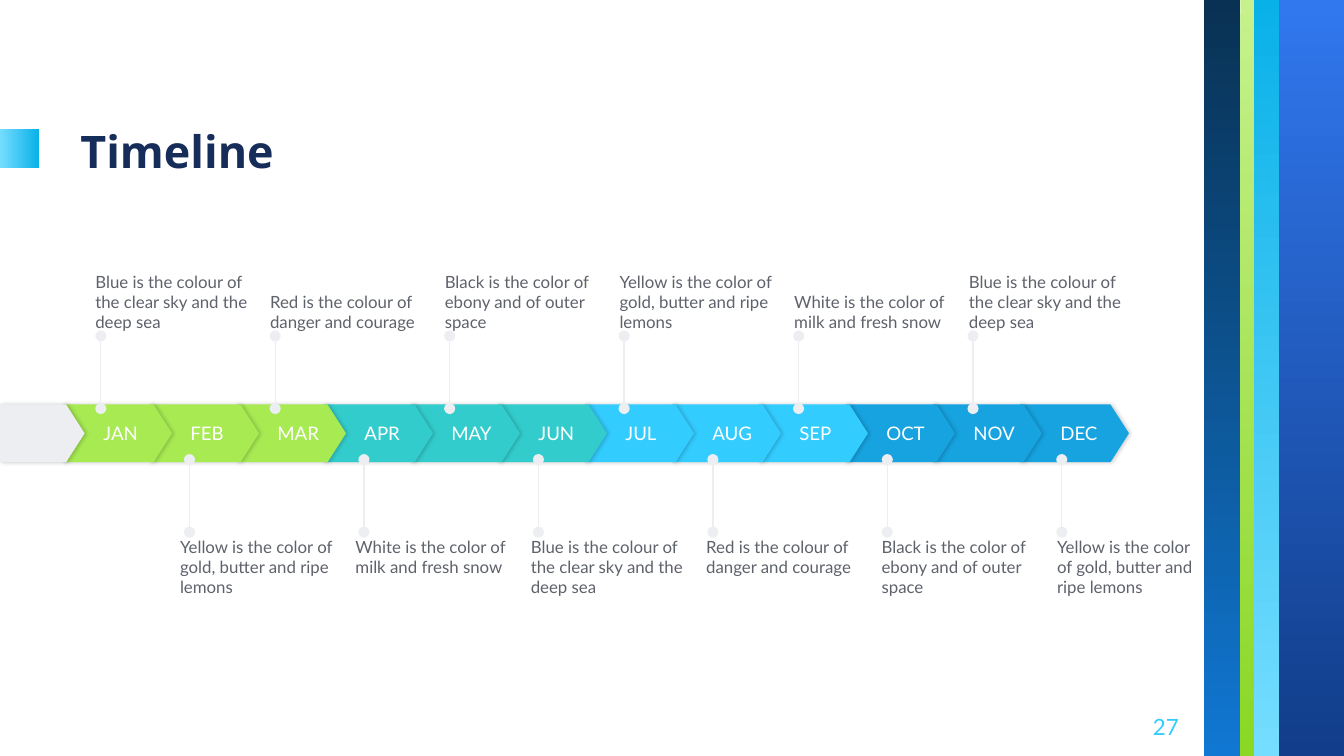
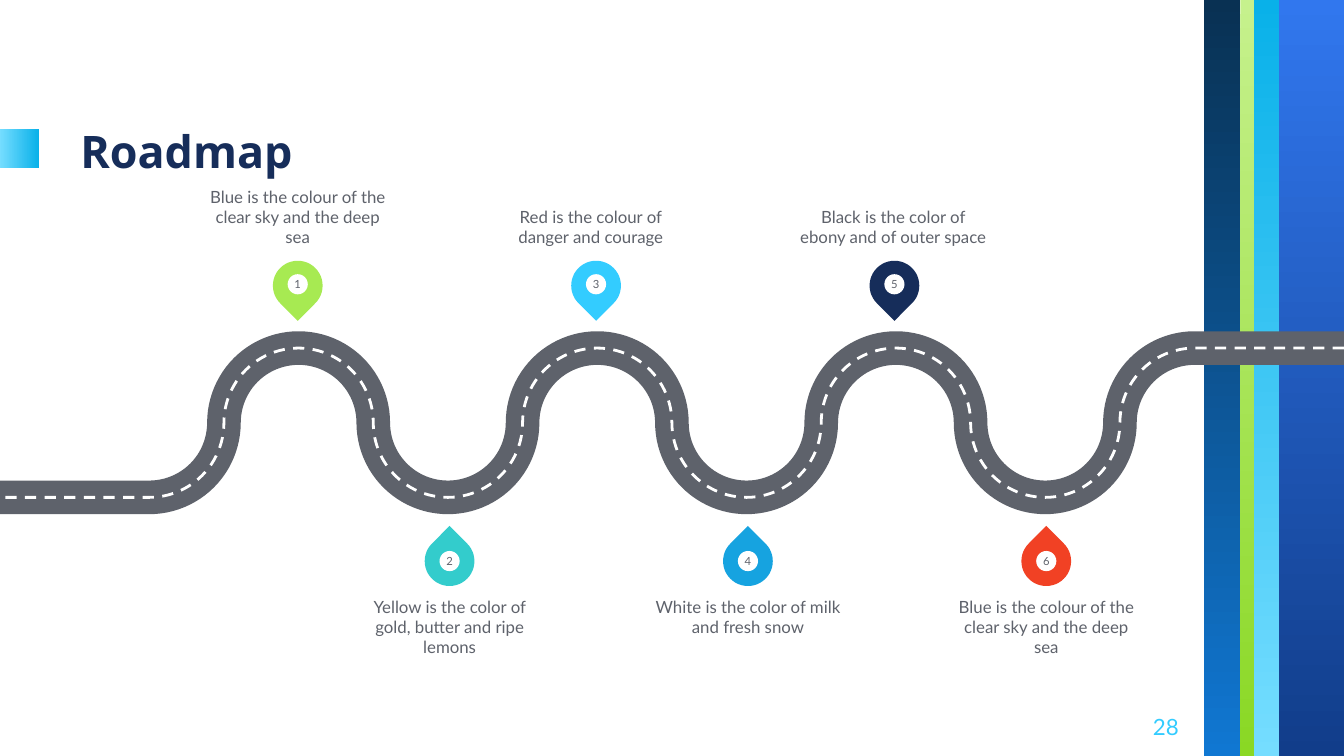
import lxml.etree
import pptx
import pptx.dml.color
import pptx.enum.dml
import pptx.enum.shapes
import pptx.enum.text
import pptx.oxml.ns
import pptx.util

Inches = pptx.util.Inches
Pt = pptx.util.Pt
RGB = pptx.dml.color.RGBColor.from_string
SHAPE = pptx.enum.shapes.MSO_SHAPE
ANCHOR = pptx.enum.text.MSO_ANCHOR
ALIGN = pptx.enum.text.PP_ALIGN
qn = pptx.oxml.ns.qn

PAGE_WIDTH = 10
PAGE_HEIGHT = PAGE_WIDTH * 9 / 16
COLORS = {
    "navy": "162D5A", "gray": "5E626B", "pale": "EDEEF1", "white": "FFFFFF",
    "lime": "A7EA52", "teal": "33CCCC", "sky": "33CCFF", "blue": "16A3E0", "red": "F14124",
    "royal": "3177EE", "royal_dark": "113D8A", "cyan": "09B1E9", "cyan_light": "75DDFF",
    "green_light": "C6F18D", "green": "8AD824", "deep": "093153", "azure": "1077D2",
}
BANDS = [
    (9.51, 0, 0.49, PAGE_HEIGHT, "royal", "royal_dark", 270),
    (9.32, 0, 0.2, PAGE_HEIGHT, "cyan", "cyan_light", 270),
    (9.23, 0, 0.1, PAGE_HEIGHT, "green_light", "green", 270),
    (8.96, 0, 0.27, PAGE_HEIGHT, "deep", "azure", 270),
    (0, 0.96, 0.29, 0.29, "cyan_light", "cyan", 0),
]
BLUE = "Blue is the colour of the clear sky and the deep sea"
YELLOW = "Yellow is the color of gold, butter and ripe lemons"
RED = "Red is the colour of danger and courage"
WHITE = "White is the color of milk and fresh snow"
BLACK = "Black is the color of ebony and of outer space"


def add_plain(shapes, kind, box, color):
    shape = shapes.add_shape(kind, *map(Inches, box))
    shape.shadow.inherit = False
    shape.line.fill.background()
    shape.fill.solid()
    shape.fill.fore_color.rgb = RGB(COLORS[color])
    return shape


def write(shape, text, size, color="gray", anchor=ANCHOR.TOP, align=ALIGN.LEFT,
          inset=(0, 0, 0, 0), font="Lato", bold=False):
    frame = shape.text_frame
    frame.word_wrap = True
    frame.vertical_anchor = anchor
    frame.margin_left, frame.margin_top, frame.margin_right, frame.margin_bottom = map(Inches, inset)
    para = frame.paragraphs[0]
    para.text = text
    para.alignment = align
    para.font.size = Pt(size)
    para.font.name = font
    para.font.bold = bold
    para.font.color.rgb = RGB(COLORS[color])


deck = pptx.Presentation()
deck.slide_width = Inches(PAGE_WIDTH)
deck.slide_height = Inches(PAGE_HEIGHT)

pages = []
for number, title in [(27, "Timeline"), (28, "Roadmap")]:
    page = deck.slides.add_slide(deck.slide_layouts[6])
    pages.append(page)
    for left, top, width, height, first, last, angle in BANDS:
        band = add_plain(page.shapes, SHAPE.RECTANGLE, (left, top, width, height), first)
        band.fill.gradient()
        band.fill.gradient_angle = angle
        for stop, position, color in zip(band.fill.gradient_stops, (0, 1), (first, last)):
            stop.position = position
            stop.color.rgb = RGB(COLORS[color])
    box = page.shapes.add_textbox(Inches(0.5), Inches(0.62), Inches(5.8), Inches(0.8))
    write(box, title, 24, "navy", ANCHOR.BOTTOM, inset=[0.1] * 4, font="Noto Sans", bold=True)
    box = page.shapes.add_textbox(Inches(8.27), Inches(5.19), Inches(0.6), Inches(0.43))
    write(box, str(number), 12, "sky", ANCHOR.MIDDLE, ALIGN.RIGHT, [0.1] * 4)

timeline, roadmap = pages

months = ["JAN", "FEB", "MAR", "APR", "MAY", "JUN", "JUL", "AUG", "SEP", "OCT", "NOV", "DEC"]
quarters = ["lime", "teal", "sky", "blue"]
plates = [(0.47 + 7.12 / 11 * i, 0.81, quarters[i // 3], month) for i, month in enumerate(months)]
for left, width, color, month in plates[::-1] + [(0, 0.63, "pale", "")]:
    plate = add_plain(timeline.shapes, SHAPE.PENTAGON, (left, 3.01, width, 0.43), color)
    plate.adjustments[0] = 0.32
    effects = plate._element.spPr.find(qn("a:effectLst"))
    shadow = lxml.etree.SubElement(effects, qn("a:outerShdw"), blurRad=str(Pt(2.2)),
                                   dist=str(Pt(0.8)), dir="0", algn="bl", rotWithShape="0")
    tint = lxml.etree.SubElement(shadow, qn("a:srgbClr"), val="000000")
    lxml.etree.SubElement(tint, qn("a:alpha"), val="20000")
    if month:
        write(plate, month, 10, "white", ANCHOR.MIDDLE, inset=(0.3, 0, 0, 0))

rows = [
    (0.75, 3.04, 2.5, 0.71, 1.3, 1.89, ANCHOR.BOTTOM, [BLUE, RED, BLACK, YELLOW, WHITE, BLUE]),
    (1.41, 3.96, 3.42, 1.34, 1.305, 3.99, ANCHOR.TOP, [YELLOW, WHITE, BLUE, RED, BLACK, YELLOW]),
]
for line_left, start, end, text_left, pitch, text_top, anchor, notes in rows:
    for i, note in enumerate(notes):
        x = Inches(line_left + 6.49 / 5 * i)
        leader = timeline.shapes.add_connector(
            pptx.enum.shapes.MSO_CONNECTOR.STRAIGHT, x, Inches(start), x, Inches(end))
        leader.line.color.rgb = RGB(COLORS["pale"])
        leader.line.width = Pt(0.75)
        outline = leader.line._get_or_add_ln()
        for tip in ("a:headEnd", "a:tailEnd"):
            lxml.etree.SubElement(outline, qn(tip), type="oval")
        lxml.etree.SubElement(leader._element.spPr, qn("a:effectLst"))
        width = 1.02 if text_left + pitch * i > 7.8 else 1.23
        box = timeline.shapes.add_textbox(
            Inches(text_left + pitch * i), Inches(text_top), Inches(width), Inches(0.58))
        write(box, note, 9, anchor=anchor)

radius = PAGE_WIDTH / 18
road_top = 2.59
bends = [(270, -90), (0, 90), (90, 90), (0, -90)]
levels = [1, 2, 1, 0]
nodes = [(16 * radius, road_top)]
nodes += [((15 - i) * radius, road_top + levels[i % 4] * radius) for i in range(14)]
nodes.append((0, road_top + 2 * radius))
for color, width, dash in [("gray", 18, None), ("white", 1.5, pptx.enum.dml.MSO_LINE.DASH)]:
    builder = roadmap.shapes.build_freeform(Inches(PAGE_WIDTH), Inches(road_top))
    builder.add_line_segments([(Inches(x), Inches(y)) for x, y in nodes], close=False)
    road = builder.convert_to_shape()
    road.shadow.inherit = False
    road.fill.background()
    road.line.color.rgb = RGB(COLORS[color])
    road.line.width = Pt(width)
    road.line.dash_style = dash
    segments = list(road._element.iter(qn("a:lnTo")))
    for i, segment in enumerate(segments[1:-1]):
        start, sweep = bends[i % 4]
        arc = lxml.etree.Element(
            qn("a:arcTo"), wR=str(Inches(radius)), hR=str(Inches(radius)),
            stAng=str(start * 60000), swAng=str(sweep * 60000))
        segment.getparent().replace(segment, arc)

stops = [
    (2.03, 1.94, 135, 0.1, "lime", 1.51, 1.26, ANCHOR.BOTTOM, BLUE),
    (3.16, 3.99, 315, 0.11, "teal", 2.64, 4.44, ANCHOR.TOP, YELLOW),
    (4.25, 1.94, 135, 0.1, "sky", 3.69, 1.26, ANCHOR.BOTTOM, RED),
    (5.38, 3.99, 315, 0.11, "blue", 4.86, 4.44, ANCHOR.TOP, WHITE),
    (6.47, 1.94, 135, 0.1, "navy", 5.94, 1.26, ANCHOR.BOTTOM, BLACK),
    (7.6, 3.99, 315, 0.11, "red", 7.08, 4.44, ANCHOR.TOP, BLUE),
]
for number, (left, top, turn, drop, color, text_left, text_top, anchor, note) in enumerate(stops, 1):
    pin = roadmap.shapes.add_group_shape()
    marker = add_plain(pin.shapes, SHAPE.TEAR, (left, top, 0.37, 0.37), color)
    marker.rotation = turn
    dot = add_plain(pin.shapes, SHAPE.OVAL, (left + 0.11, top + drop, 0.15, 0.15), "white")
    write(dot, str(number), 6, anchor=ANCHOR.MIDDLE, align=ALIGN.CENTER)
    box = roadmap.shapes.add_textbox(
        Inches(text_left), Inches(text_top), Inches(1.41), Inches(0.58))
    write(box, note, 9, anchor=anchor, align=ALIGN.CENTER)

deck.save("out.pptx")
